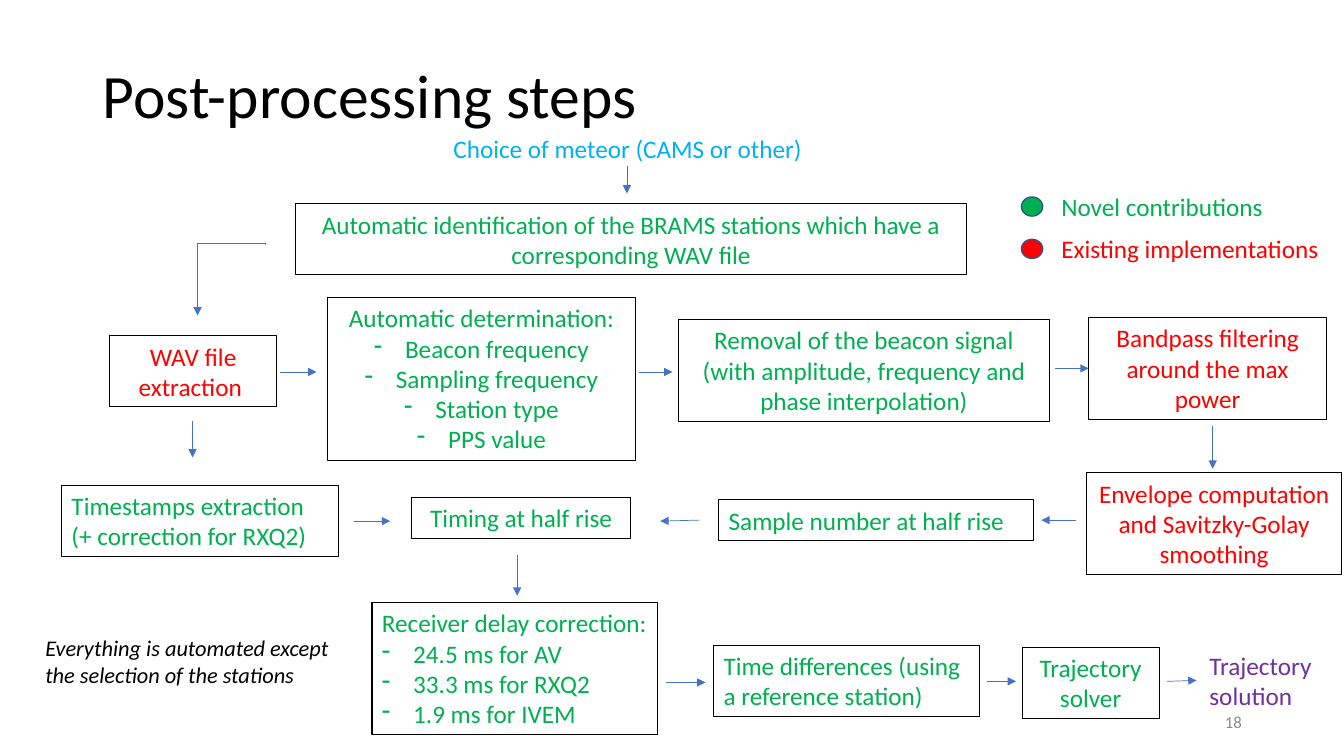
from lxml import etree
from pptx import Presentation
from pptx.dml.color import RGBColor
from pptx.enum.shapes import MSO_CONNECTOR, MSO_SHAPE
from pptx.enum.text import MSO_ANCHOR, PP_ALIGN
from pptx.oxml.ns import qn
from pptx.util import Inches, Pt

STRAIGHT, ELBOW = MSO_CONNECTOR.STRAIGHT, MSO_CONNECTOR.ELBOW
RECTANGLE, OVAL = MSO_SHAPE.RECTANGLE, MSO_SHAPE.OVAL
TOP, MIDDLE = MSO_ANCHOR.TOP, MSO_ANCHOR.MIDDLE
LEFT, CENTER, RIGHT = PP_ALIGN.LEFT, PP_ALIGN.CENTER, PP_ALIGN.RIGHT

BLACK = RGBColor(0x00, 0x00, 0x00)
GRAY = RGBColor(0x8C, 0x8C, 0x8C)
GREEN = RGBColor(0x00, 0xB0, 0x50)
RED = RGBColor(0xFF, 0x00, 0x00)
SKY = RGBColor(0x00, 0xB0, 0xF0)
PURPLE = RGBColor(0x70, 0x30, 0xA0)
ARROW_BLUE = RGBColor(0x44, 0x72, 0xC4)
DOT_EDGE = RGBColor(0x32, 0x54, 0x91)

# The slide is a grid of 100 columns by 100 rows.
WIDTH, HEIGHT = Inches(13.33), Inches(7.5)
BODY_SIZE = 18
LINE_ROWS = 4.03  # one line of body text
PADDING_ROWS = 1.33  # top and bottom insets of a box
HANGING = Inches(0.31)

# text, list items, left column, centre row, columns wide, lines, colour, alignment
STEPS = [
    ("Automatic identification of the BRAMS stations which have a corresponding WAV file",
     (), 21.98, 31.67, 49.95, 2, GREEN, CENTER),
    ("WAV file extraction ", (), 8.18, 49.13, 12.38, 2, RED, CENTER),
    ("Automatic determination:",
     ("Beacon frequency", "Sampling frequency", "Station type", "PPS value"),
     24.38, 50.13, 22.88, 5, GREEN, CENTER),
    ("Removal of the beacon signal (with amplitude, frequency and phase interpolation)",
     (), 50.48, 49, 27.6, 3, GREEN, CENTER),
    ("Bandpass filtering around the max power", (), 81, 48.73, 17.7, 3, RED, CENTER),
    ("Envelope computation and Savitzky-Golay smoothing",
     (), 80.85, 69.27, 18.98, 3, RED, CENTER),
    ("Sample number at half rise", (), 53.48, 68.8, 23.4, 1, GREEN, LEFT),
    ("Timing at half rise", (), 30.6, 68.53, 16.35, 1, GREEN, CENTER),
    ("Timestamps extraction (+ correction for RXQ2)",
     (), 4.58, 68.87, 20.63, 2, GREEN, LEFT),
    ("Receiver delay correction:",
     ("24.5 ms for AV", "33.3 ms for RXQ2", "1.9 ms for IVEM"),
     27.68, 88.47, 21.23, 4, GREEN, LEFT),
    ("Time differences (using a reference station)",
     (), 53.1, 90.07, 19.8, 2, GREEN, LEFT),
    ("Trajectory solver", (), 76.05, 90.33, 10.2, 2, GREEN, CENTER),
]

# start column, start row, end column, end row
ARROWS = [
    (46.65, 22, 46.65, 25.6),
    (20.85, 49.2, 23.55, 49.2),
    (47.55, 49.2, 50.03, 49.2),
    (14.33, 55.73, 14.33, 60.53),
    (90.23, 56.4, 90.23, 62),
    (80.03, 68.8, 77.48, 68.8),
    (52.05, 68.8, 49.13, 68.93),
    (26.33, 68.93, 29.03, 68.93),
    (38.48, 73.47, 38.48, 78.8),
    (49.58, 90.27, 52.5, 90.27),
    (73.43, 90.13, 75.6, 90.13),
    (86.85, 90.13, 89.03, 90),
]

LEGEND = [("Novel contributions", GREEN, 27.33), ("Existing implementations", RED, 32.93)]


def columns(count):
    return round(WIDTH * count / 100)


def rows(count):
    return round(HEIGHT * count / 100)


def frame(left, centre, width, lines, size):
    """Return left, top, width and height of a box sized by its lines of text."""
    height = PADDING_ROWS + lines * LINE_ROWS * size / BODY_SIZE
    return columns(left), rows(centre - height / 2), columns(width), rows(height)


def write(shape, texts, color, size=BODY_SIZE, alignment=LEFT, anchor=TOP, italic=None):
    """Write the first text plainly and the others as dashed list items."""
    text_frame = shape.text_frame
    text_frame.word_wrap = True
    text_frame.vertical_anchor = anchor
    for index, text in enumerate(texts):
        paragraph = text_frame.add_paragraph() if index else text_frame.paragraphs[0]
        paragraph.text = text
        paragraph.alignment = alignment
        if index:
            properties = paragraph._p.get_or_add_pPr()
            properties.set("marL", str(HANGING))
            properties.set("indent", str(-HANGING))
            etree.SubElement(properties, qn("a:buChar"), char="-")
        font = paragraph.font
        font.name, font.size, font.italic = "Calibri", Pt(size), italic
        font.color.rgb = color


def add_label(slide, text, left, centre, width, lines, color, size=BODY_SIZE, **style):
    label = slide.shapes.add_textbox(*frame(left, centre, width, lines, size))
    write(label, [text], color, size, **style)


def add_step(slide, text, items, left, centre, width, lines, color, alignment):
    box = slide.shapes.add_shape(RECTANGLE, *frame(left, centre, width, lines, BODY_SIZE))
    box.shadow.inherit = False
    box.fill.background()
    box.line.color.rgb = BLACK
    box.line.width = Pt(0.75)
    write(box, [text, *items], color, alignment=alignment)
    return box


def add_arrow(slide, start_column, start_row, end_column, end_row, kind=STRAIGHT):
    arrow = slide.shapes.add_connector(
        kind, columns(start_column), rows(start_row), columns(end_column), rows(end_row))
    arrow.line.color.rgb = ARROW_BLUE
    arrow.line.width = Pt(0.5)
    etree.SubElement(arrow.line._get_or_add_ln(), qn("a:tailEnd"), type="triangle")
    etree.SubElement(arrow._element.spPr, qn("a:effectLst"))
    return arrow


def add_corner_arrow(slide, *ends):
    """Add an elbow turned by 90 degrees that runs left and then down."""
    arrow = add_arrow(slide, *ends, kind=ELBOW)
    properties = arrow._element.spPr
    properties.find(qn("a:xfrm")).set("rot", "5400000")
    adjustments = properties.find(qn("a:prstGeom")).find(qn("a:avLst"))
    etree.SubElement(adjustments, qn("a:gd"), name="adj1", fmla="val -500")


def add_legend_entry(slide, text, color, centre):
    dot = slide.shapes.add_shape(
        OVAL, columns(76), rows(centre - 1.27), columns(1.58), rows(2.53))
    dot.shadow.inherit = False
    dot.fill.solid()
    dot.fill.fore_color.rgb = color
    dot.line.color.rgb = DOT_EDGE
    dot.line.width = Pt(1)
    add_label(slide, text, 78.23, centre, 22.13, 1, color)


def main():
    presentation = Presentation()
    presentation.slide_width, presentation.slide_height = WIDTH, HEIGHT
    slide = presentation.slides.add_slide(presentation.slide_layouts[6])

    add_label(slide, "Post-processing steps", 6.9, 12.47, 86.25, 1.83, BLACK, 44,
              anchor=MIDDLE)
    add_label(slide, "Choice of meteor (CAMS or other)", 33, 19.6, 31.65, 1, SKY)
    boxes = {step[0]: add_step(slide, *step) for step in STEPS}
    for ends in ARROWS:
        add_arrow(slide, *ends)
    to_bandpass = add_arrow(slide, 78.53, 48.73, 81, 48.73)
    to_bandpass.end_connect(boxes["Bandpass filtering around the max power"], 1)
    add_corner_arrow(slide, 14.55, 32.53, 19.88, 41.47)
    for entry in LEGEND:
        add_legend_entry(slide, *entry)
    add_label(slide, "Trajectory solution", 89.25, 90.07, 11.85, 2, PURPLE)
    add_label(slide, "Everything is automated except the selection of the stations",
              2.63, 87.47, 22.88, 2, BLACK, 16, italic=True)
    add_label(slide, "18", 70.65, 95.47, 22.5, 1.5, GRAY, 12,
              alignment=RIGHT, anchor=MIDDLE)
    presentation.save("out.pptx")


if __name__ == "__main__":
    main()
